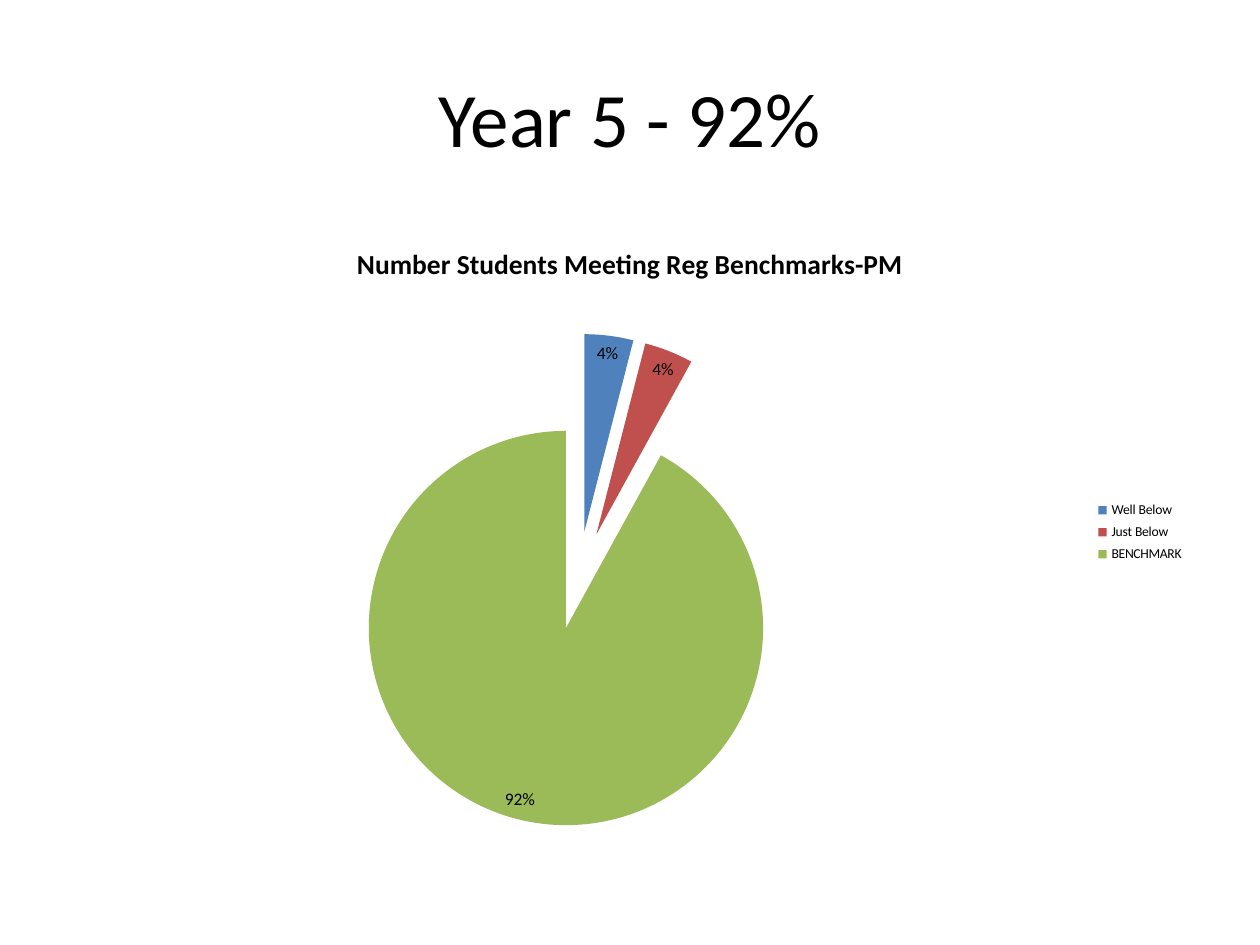
from pptx import Presentation
from pptx.chart.data import CategoryChartData
from pptx.dml.color import RGBColor
from pptx.enum.chart import XL_CHART_TYPE, XL_LABEL_POSITION, XL_LEGEND_POSITION
from pptx.enum.text import MSO_ANCHOR, PP_ALIGN
from pptx.oxml import parse_xml
from pptx.oxml.ns import nsdecls
from pptx.util import Inches, Pt

FONT = "Calibri"
COLORS = {
    "text": "000000",
    "Well Below": "4F81BD",
    "Just Below": "C0504D",
    "BENCHMARK": "9BBB59",
}
SHARES = {"Well Below": 0.04, "Just Below": 0.04, "BENCHMARK": 0.92}
EXPLOSION = 25


def format_font(font, size, bold=False, color="text"):
    font.name = FONT
    font.size = Pt(size)
    font.bold = bold
    font.color.rgb = RGBColor.from_string(COLORS[color])


def write_text(frame, text, size, bold=False, align=PP_ALIGN.CENTER):
    frame.text = text
    paragraph = frame.paragraphs[0]
    paragraph.alignment = align
    format_font(paragraph.runs[0].font, size, bold)


def place_heading(slide, text):
    heading = slide.shapes.title
    heading.left, heading.top = Inches(0.5), Inches(0.3)
    heading.width, heading.height = Inches(9), Inches(1.25)
    heading.text_frame.vertical_anchor = MSO_ANCHOR.MIDDLE
    write_text(heading.text_frame, text, size=44)


def add_benchmark_pie(slide, title):
    shares = CategoryChartData(number_format="0%")
    shares.categories = list(SHARES)
    shares.add_series("Series 1", list(SHARES.values()))
    pie = slide.shapes.add_chart(
        XL_CHART_TYPE.PIE, Inches(0.5), Inches(1.75), Inches(9), Inches(4.95), shares
    ).chart
    format_font(pie.font, 10)

    # Title and legend
    pie.has_title = True
    write_text(pie.chart_title.text_frame, title, size=15.7, bold=True)
    pie.chart_title.include_in_layout = False
    pie.has_legend = True
    pie.legend.position = XL_LEGEND_POSITION.RIGHT
    pie.legend.include_in_layout = False
    format_font(pie.legend.font, 7.8)

    # Slices, all pulled apart equally
    plot = pie.plots[0]
    plot.vary_by_categories = True
    series = plot.series[0]
    for index, category in enumerate(SHARES):
        fill = series.points[index].format.fill
        fill.solid()
        fill.fore_color.rgb = RGBColor.from_string(COLORS[category])
    first_point = series._element.find("{*}dPt")
    first_point.addprevious(
        parse_xml(f'<c:explosion {nsdecls("c")} val="{EXPLOSION}"/>')
    )

    # Percentage labels
    labels = series.data_labels
    labels.show_value = True
    labels.number_format = "0%"
    labels.number_format_is_linked = False
    labels.position = XL_LABEL_POSITION.BEST_FIT
    format_font(labels.font, 10)


def main():
    deck = Presentation()
    deck.slide_width, deck.slide_height = Inches(10), Inches(7.5)
    slide = deck.slides.add_slide(deck.slide_layouts[5])
    place_heading(slide, "Year 5 - 92%")
    add_benchmark_pie(slide, "Number Students Meeting Reg Benchmarks-PM")
    deck.save("out.pptx")


if __name__ == "__main__":
    main()
